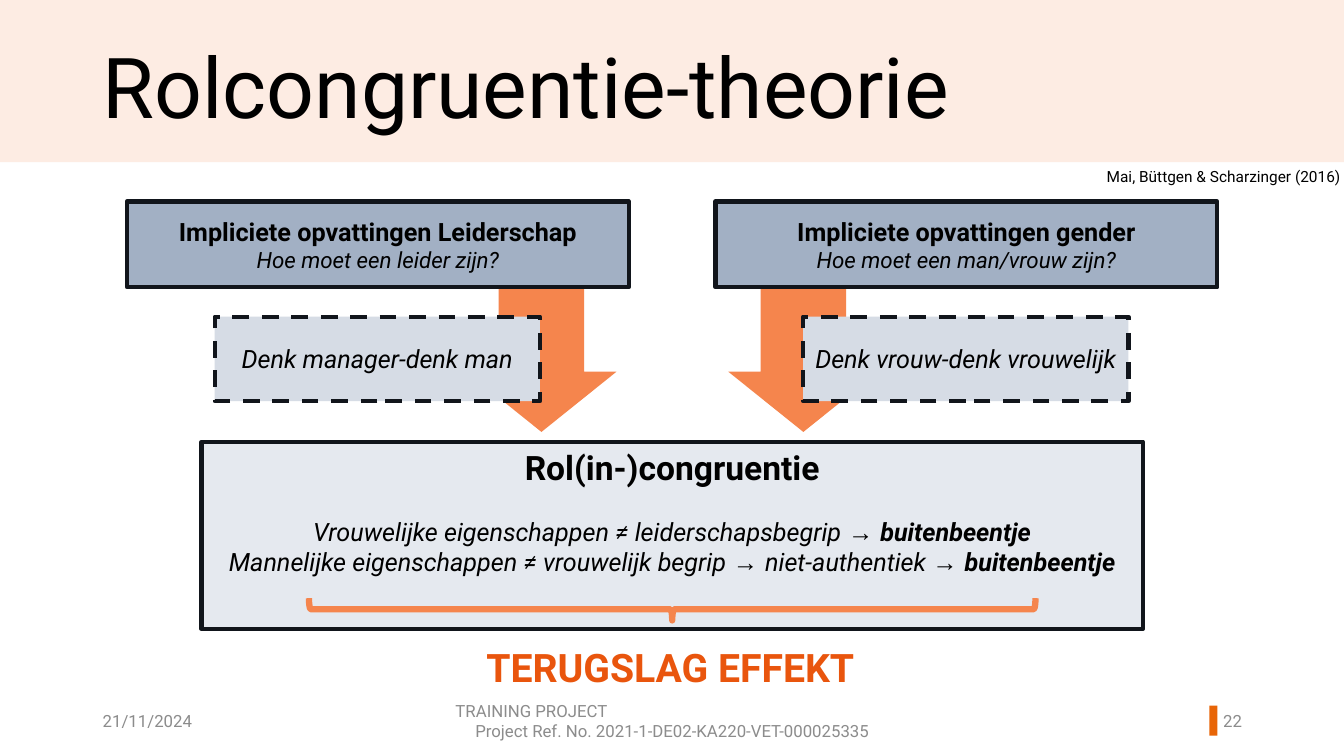
from pptx import Presentation
from pptx.dml.color import RGBColor
from pptx.enum.dml import MSO_LINE
from pptx.enum.shapes import MSO_SHAPE
from pptx.enum.text import MSO_ANCHOR, MSO_AUTO_SIZE, PP_ALIGN
from pptx.util import Cm, Pt

BLACK, NAVY, GREY = "000000", "11151B", "8C8C8C"
ORANGE, DEEP_ORANGE, TICK_ORANGE = "F5854D", "E9550D", "E86507"
PEACH, STEEL, PALE_STEEL, MIST = "FDECE3", "A2B0C4", "D6DCE5", "E5E9EF"
COLUMN_STEP = 14.83
ARROW_STEP = 6.6


def color(hex_string):
    """Turn a hex string into a colour."""
    return RGBColor.from_string(hex_string)


def add_run(paragraph, text, size, hex_string=BLACK, style="", font="Roboto"):
    """Append a run; style may hold b for bold and i for italic."""
    run = paragraph.add_run()
    run.text = text
    run.font.name = font
    run.font.size = Pt(size)
    run.font.bold = "b" in style
    run.font.italic = "i" in style
    run.font.color.rgb = color(hex_string)


def add_figure(slide, kind, box, fill=None, line=None, width=3, dashed=False):
    """Add a preset shape at left, top, width and height in centimetres."""
    shape = slide.shapes.add_shape(kind, *map(Cm, box))
    shape.shadow.inherit = False
    if fill:
        shape.fill.solid()
        shape.fill.fore_color.rgb = color(fill)
    else:
        shape.fill.background()
    if line:
        shape.line.color.rgb = color(line)
        shape.line.width = Pt(width)
        if dashed:
            shape.line.dash_style = MSO_LINE.DASH
    else:
        shape.line.fill.background()
    return shape


def add_panel(slide, box, fill, lines, anchor=MSO_ANCHOR.MIDDLE, dashed=False):
    """Add an outlined box with centred lines, each a list of runs."""
    shape = add_figure(slide, MSO_SHAPE.RECTANGLE, box, fill, NAVY, dashed=dashed)
    frame = shape.text_frame
    frame.word_wrap = True
    frame.vertical_anchor = anchor
    for index, runs in enumerate(lines):
        paragraph = frame.paragraphs[0] if index == 0 else frame.add_paragraph()
        paragraph.alignment = PP_ALIGN.CENTER
        for run in runs:
            add_run(paragraph, *run)
    return shape


def add_label(slide, box, lines, size, hex_string, style="",
              anchor=MSO_ANCHOR.TOP, wrap=True):
    """Add a text box from pairs of text and alignment."""
    frame = slide.shapes.add_textbox(*map(Cm, box)).text_frame
    frame.word_wrap = wrap
    frame.vertical_anchor = anchor
    for index, (text, alignment) in enumerate(lines):
        paragraph = frame.paragraphs[0] if index == 0 else frame.add_paragraph()
        paragraph.alignment = alignment
        add_run(paragraph, text, size, hex_string, style)


def add_title(slide, text):
    """Place the title on its peach band."""
    band = add_figure(slide, MSO_SHAPE.RECTANGLE, (0, 0, 33.87, 4.09), PEACH)
    title = slide.shapes.title
    title._element.addprevious(band._element)
    title.left, title.top, title.width, title.height = map(Cm, (2.34, 1.04, 25.22, 2.16))
    frame = title.text_frame
    frame.auto_size = MSO_AUTO_SIZE.NONE
    frame.vertical_anchor = MSO_ANCHOR.TOP
    paragraph = frame.paragraphs[0]
    paragraph.alignment = PP_ALIGN.LEFT
    paragraph.line_spacing = 0.9
    add_run(paragraph, text, 60)


def add_beliefs(slide):
    """Add the two columns of beliefs and their arrows."""
    columns = [
        ("Impliciete opvattingen Leiderschap", "Hoe moet een leider zijn?",
         "Denk manager-denk man"),
        ("Impliciete opvattingen gender", "Hoe moet een man/vrouw zijn?",
         "Denk vrouw-denk vrouwelijk"),
    ]
    for index, (heading, question, stereotype) in enumerate(columns):
        arrow = add_figure(slide, MSO_SHAPE.RIGHT_ARROW,
                           (11.84 + index * ARROW_STEP, 7.19, 3.61, 3.78), ORANGE)
        arrow.rotation = 90
        arrow.adjustments[0], arrow.adjustments[1] = 0.57, 0.42
        shift = index * COLUMN_STEP
        add_panel(slide, (3.2 + shift, 5.08, 12.65, 2.16), STEEL,
                  [[(heading, 18, BLACK, "b")], [(question, 16, BLACK, "i")]])
        add_panel(slide, (5.41 + shift, 7.98, 8.2, 2.13), PALE_STEEL,
                  [[(stereotype, 18, BLACK, "i")]], dashed=True)


def add_congruence(slide):
    """Add the congruence box, its brace and the conclusion."""
    arrow = ("→ ", 18, BLACK, "i", "Arial")
    outsider = ("buitenbeentje", 18, BLACK, "bi")
    panel = add_panel(slide, (5.08, 11.13, 23.72, 4.72), MIST, [
        [("Rol(in-)congruentie", 24, BLACK, "b")],
        [("Vrouwelijke eigenschappen ≠ leiderschapsbegrip ", 18, BLACK, "i"),
         arrow, outsider],
        [("Mannelijke eigenschappen ≠ vrouwelijk begrip ", 18, BLACK, "i"),
         arrow, ("niet-authentiek ", 18, BLACK, "i"), arrow, outsider],
    ], anchor=MSO_ANCHOR.TOP)
    panel.text_frame.paragraphs[1].space_before = Pt(21)
    brace = add_figure(slide, MSO_SHAPE.RIGHT_BRACE, (16.66, 6.2, 0.56, 18.31),
                       line=ORANGE, width=4.5)
    brace.rotation = 90
    add_label(slide, (12.01, 16.08, 9.83, 1.45),
              [("TERUGSLAG EFFEKT", PP_ALIGN.LEFT)], 28, DEEP_ORANGE, "b", wrap=False)


def add_footer(slide):
    """Add the date, project reference and page number."""
    add_figure(slide, MSO_SHAPE.RECTANGLE, (30.48, 17.78, 0.2, 0.76), TICK_ORANGE)
    footers = [
        (2.34, 7.62, [("21/11/2024", PP_ALIGN.LEFT)]),
        (11.23, 11.43, [("TRAINING PROJECT", PP_ALIGN.LEFT),
                        ("Project Ref. No. 2021-1-DE02-KA220-VET-000025335",
                         PP_ALIGN.CENTER)]),
        (29.9, 1.65, [("22", PP_ALIGN.RIGHT)]),
    ]
    for left, width, lines in footers:
        add_label(slide, (left, 17.65, width, 1.02), lines, 12, GREY,
                  anchor=MSO_ANCHOR.MIDDLE)


def main():
    """Build and save the slide."""
    presentation = Presentation()
    presentation.slide_width, presentation.slide_height = Cm(33.87), Cm(19.05)
    slide = presentation.slides.add_slide(presentation.slide_layouts[5])
    add_title(slide, "Rolcongruentie-theorie")
    add_beliefs(slide)
    add_congruence(slide)
    add_footer(slide)
    add_label(slide, (27.64, 4.09, 6.45, 0.74),
              [("Mai, Büttgen & Scharzinger (2016)", PP_ALIGN.LEFT)], 11, BLACK)
    presentation.save("out.pptx")


if __name__ == "__main__":
    main()
